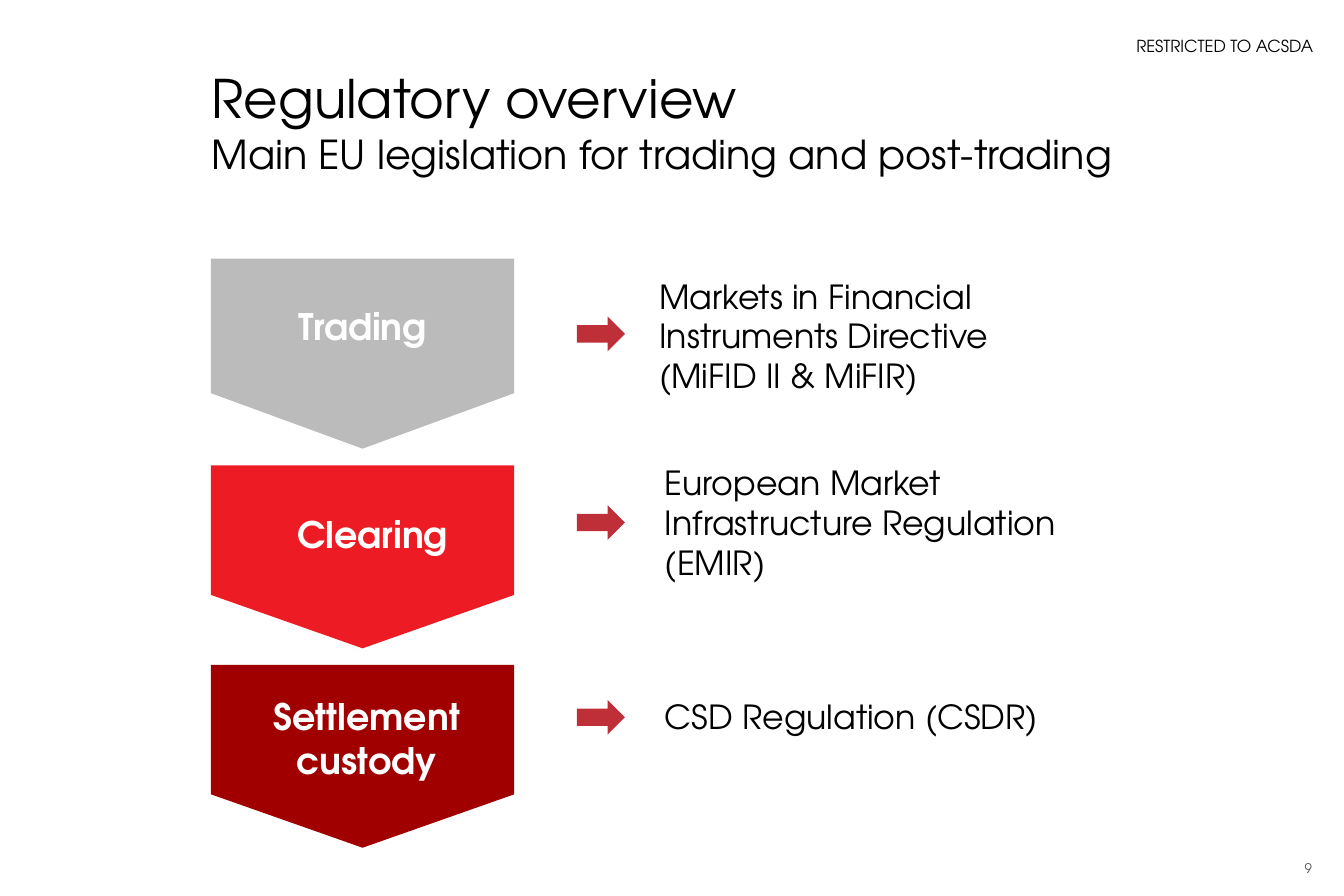
import pptx
import pptx.dml.color
import pptx.enum.shapes
import pptx.enum.text
import pptx.util
from dataclasses import dataclass

Cm = pptx.util.Cm
Shape = pptx.enum.shapes.MSO_SHAPE
Align = pptx.enum.text.PP_ALIGN
Anchor = pptx.enum.text.MSO_ANCHOR


@dataclass(frozen=True)
class Theme:
    font: str = "TeX Gyre Adventor"
    black: str = "000000"
    white: str = "FFFFFF"
    dark: str = "555555"
    gray: str = "BBBBBB"
    red: str = "ED1C24"
    deep: str = "A00000"
    arrow: str = "BF2F38"
    title: int = 32
    lead: int = 24
    label: int = 22
    body: int = 20
    mark: int = 10
    folio: int = 8


def rgb(color):
    return pptx.dml.color.RGBColor.from_string(color)


def write(par, text, *, font, size, color, bold=False):
    """Append one styled run to a paragraph."""
    run = par.add_run()
    run.text = text
    run.font.name = font
    run.font.size = pptx.util.Pt(size)
    run.font.color.rgb = rgb(color)
    run.font.bold = bold


class Deck:
    def __init__(self, theme, width, height):
        self.theme = theme
        self.file = pptx.Presentation()
        self.file.slide_width, self.file.slide_height = Cm(width), Cm(height)
        self.slide = self.file.slides.add_slide(self.file.slide_layouts[6])

    def text(self, box, *lines, color=None, bold=False, align=Align.LEFT,
             anchor=Anchor.TOP, space=None, inset=True):
        """Add a text box; each line is a (text, size) pair."""
        frame = self.slide.shapes.add_textbox(*map(Cm, box)).text_frame
        frame.word_wrap = True
        frame.vertical_anchor = anchor
        if not inset:
            frame.margin_left = frame.margin_right = 0
            frame.margin_top = frame.margin_bottom = 0
        par = frame.paragraphs[0]
        par.alignment = align
        par.line_spacing = space
        for place, (text, size) in enumerate(lines):
            if place:
                par.add_line_break()
            write(par, text, font=self.theme.font, size=size,
                  color=color or self.theme.black, bold=bold)

    def shape(self, kind, box, color):
        shape = self.slide.shapes.add_shape(kind, *map(Cm, box))
        shape.shadow.inherit = False
        shape.fill.solid()
        shape.fill.fore_color.rgb = rgb(color)
        shape.line.fill.background()
        return shape

    def stage(self, mid, depth, color):
        """Add a block that points down, centred on the stage column."""
        center, width = 7.71, 6.45
        box = (center - depth / 2, mid - width / 2, depth, width)
        block = self.shape(Shape.PENTAGON, box, color)
        block.adjustments[0] = 0.292
        block.rotation = 90

    def arrow(self, top):
        self.shape(Shape.RIGHT_ARROW, (12.27, top, 1.02, 0.74),
                   self.theme.arrow)


def main():
    theme = Theme()
    deck = Deck(theme, 28.58, 19.05)

    # Header and title
    deck.text((8.79, 0.33, 19.38, 0.99), ("RESTRICTED TO ACSDA", theme.mark),
              align=Align.RIGHT, anchor=Anchor.BOTTOM, space=1.1)
    deck.text((4.5, 1.4, 20.24, 2.01),
              ("Regulatory overview", theme.title),
              ("Main EU legislation for trading and post-trading", theme.lead),
              inset=False)

    # Stages: block middle, depth and colour; label, box and alignment
    stages = [
        (7.52, 4.04, theme.gray, "Trading",
         (6.1, 6.35, 4.6, 2.39), Align.LEFT),
        (11.84, 3.89, theme.red, "Clearing",
         (6.07, 10.77, 4.6, 2.39), Align.LEFT),
        (16.08, 3.89, theme.deep, "Settlement custody",
         (5.21, 14.63, 5.18, 2.39), Align.CENTER),
    ]
    for mid, depth, color, name, box, align in stages:
        deck.stage(mid, depth, color)
        deck.text(box, (name, theme.label), color=theme.white, bold=True,
                  align=align)

    # Laws: arrow top; text, box and anchor
    laws = [
        (6.73, "Markets in Financial Instruments Directive (MiFID II & MiFIR)",
         (13.77, 5.33, 9.32, 3.61), Anchor.MIDDLE),
        (10.74, "European Market Infrastructure Regulation (EMIR)",
         (13.89, 9.37, 9.8, 3.48), Anchor.MIDDLE),
        (14.88, "CSD Regulation (CSDR)",
         (13.89, 14.68, 10.82, 3.4), Anchor.TOP),
    ]
    for top, law, box, anchor in laws:
        deck.arrow(top)
        deck.text(box, (law, theme.body), anchor=anchor)

    # Page number
    deck.text((27.08, 18.14, 1.07, 0.61), ("9", theme.folio),
              color=theme.dark, align=Align.RIGHT, anchor=Anchor.BOTTOM)

    deck.file.save("out.pptx")


if __name__ == "__main__":
    main()
